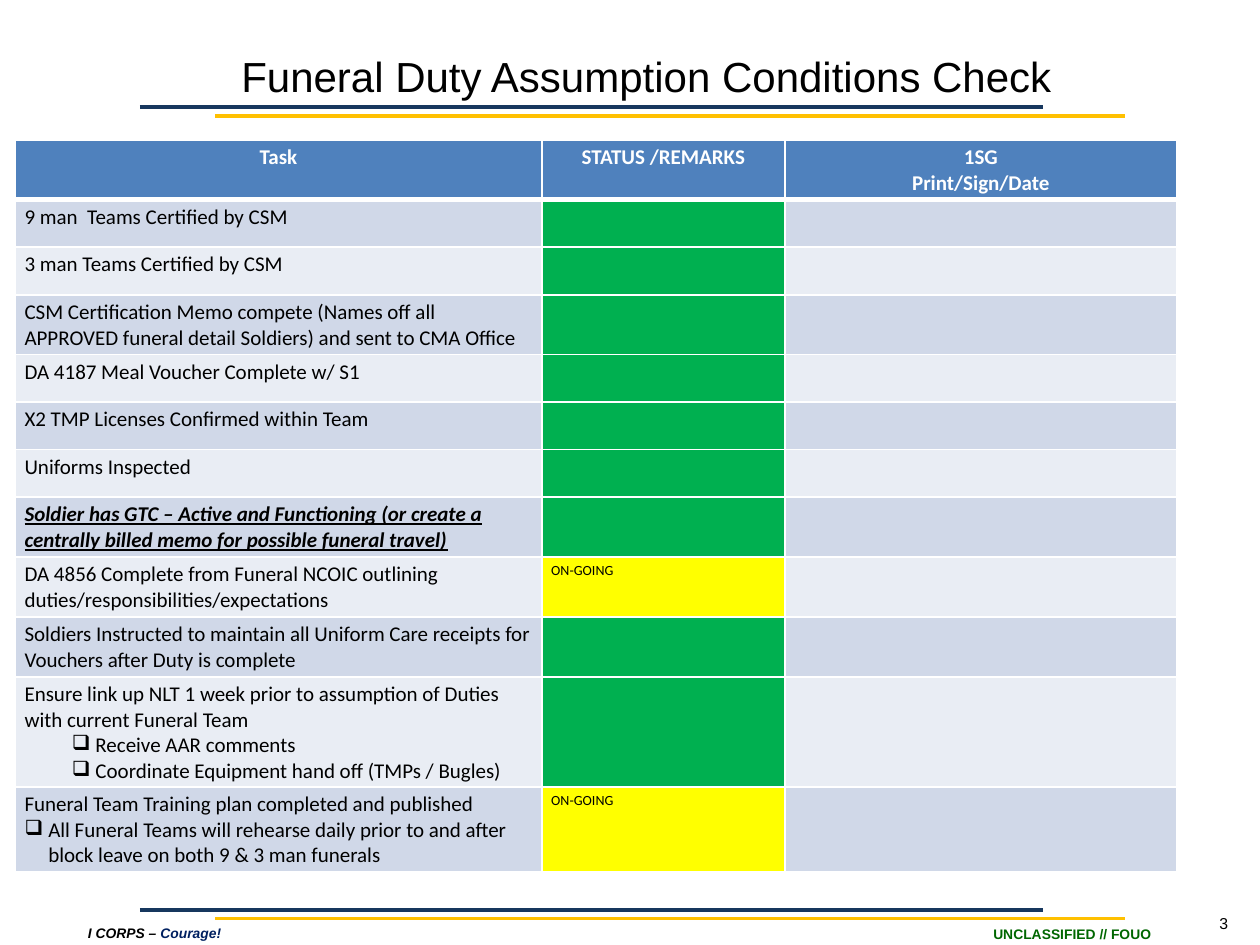
import pptx
import pptx.util
import pptx.dml.color
import pptx.enum.shapes
import pptx.enum.text
import pptx.oxml.ns
from lxml import etree

Pt = pptx.util.Pt
RGBColor = pptx.dml.color.RGBColor
ALIGN = pptx.enum.text.PP_ALIGN
ANCHOR = pptx.enum.text.MSO_ANCHOR
qn = pptx.oxml.ns.qn

WIDTH = pptx.util.Inches(10)
HEIGHT = pptx.util.Inches(7.5)

BLACK = RGBColor(0x00, 0x00, 0x00)
WHITE = RGBColor(0xFF, 0xFF, 0xFF)
NAVY = RGBColor(0x17, 0x37, 0x5E)
GOLD = RGBColor(0xFF, 0xC0, 0x00)
MOTTO = RGBColor(0x00, 0x20, 0x60)
MARKING = RGBColor(0x00, 0x66, 0x00)
HEADER = RGBColor(0x4F, 0x81, 0xBD)
BANDS = (RGBColor(0xD0, 0xD8, 0xE8), RGBColor(0xE9, 0xED, 0xF4))
GREEN = RGBColor(0x00, 0xB0, 0x50)
YELLOW = RGBColor(0xFF, 0xFF, 0x00)

COLUMNS = (41.8, 19.3, 31.1)
HEADER_ROW, TASK_ROW = 4.53, 5.03
BULLET = "❑"
HEADINGS = ("Task", "STATUS /REMARKS", "1SG\nPrint/Sign/Date")
KEY_TASK = "Soldier has GTC – Active and Functioning (or create a centrally billed memo for possible funeral travel)"
TASKS = (
    ("9 man  Teams Certified by CSM", ""),
    ("3 man Teams Certified by CSM", ""),
    ("CSM Certification Memo compete (Names off all APPROVED funeral detail Soldiers) and sent to CMA Office", ""),
    ("DA 4187 Meal Voucher Complete w/ S1", ""),
    ("X2 TMP Licenses Confirmed within Team", ""),
    ("Uniforms Inspected", ""),
    (KEY_TASK, ""),
    ("DA 4856 Complete from Funeral NCOIC outlining duties/responsibilities/expectations", "ON-GOING"),
    ("Soldiers Instructed to maintain all Uniform Care receipts for Vouchers after Duty is complete", ""),
    ("Ensure link up NLT 1 week prior to assumption of Duties with current Funeral Team", ""),
    ("Funeral Team Training plan completed and published", "ON-GOING"),
)
SUBTASKS = {
    9: (1, ("Receive AAR comments", "Coordinate Equipment hand off (TMPs / Bugles)")),
    10: (0, ("All Funeral Teams will rehearse daily prior to and after block leave on both 9 & 3 man funerals",)),
}


def across(percent):
    return round(WIDTH * percent / 100)


def down(percent):
    return round(HEIGHT * percent / 100)


def style_run(r, size, color, font="Calibri", bold=False, italic=False, underline=False):
    r.font.name = font
    r.font.size = Pt(size)
    r.font.color.rgb = color
    r.font.bold = bold
    r.font.italic = italic
    r.font.underline = underline


def add_rule(slide, left, right, y, color):
    line = slide.shapes.add_connector(
        pptx.enum.shapes.MSO_CONNECTOR.STRAIGHT, across(left), down(y), across(right), down(y))
    line.line.color.rgb = color
    line.line.width = Pt(2.25)
    etree.SubElement(line._element.spPr, qn("a:effectLst"))


def add_text(slide, left, top, width, height, parts, size, align=ALIGN.LEFT, **style):
    sp = slide.shapes.add_textbox(across(left), down(top), across(width), down(height))
    tf = sp.text_frame
    tf.word_wrap = True
    p = tf.paragraphs[0]
    p.alignment = align
    for text, color in parts:
        r = p.add_run()
        r.text = text
        style_run(r, size, color, "Arial", **style)
    return tf


def set_borders(cell, top, bottom):
    tcPr = cell._tc.get_or_add_tcPr()
    for i, (side, width) in enumerate((("L", 1), ("R", 1), ("T", top), ("B", bottom))):
        ln = etree.Element(qn("a:ln" + side), w=str(Pt(width)))
        fill = etree.SubElement(ln, qn("a:solidFill"))
        etree.SubElement(fill, qn("a:srgbClr"), val=str(WHITE))
        tcPr.insert(i, ln)


def fill_cell(cell, text, fill, size=12, color=BLACK, align=ALIGN.LEFT, top=1, bottom=1, **style):
    cell.fill.solid()
    cell.fill.fore_color.rgb = fill
    cell.margin_left = cell.margin_right = across(0.75)
    cell.margin_top = cell.margin_bottom = down(0.5)
    set_borders(cell, top, bottom)
    if text:
        cell.text_frame.text = text
        for p in cell.text_frame.paragraphs:
            p.alignment = align
            for r in p.runs:
                style_run(r, size, color, **style)


def add_bullet(cell, text, level):
    p = cell.text_frame.add_paragraph()
    p.text = text
    p.level = level
    pPr = p._p.get_or_add_pPr()
    pPr.set("marL", str(across(1.88 + 3.75 * level)))
    pPr.set("indent", str(-across(1.88)))
    etree.SubElement(pPr, qn("a:buChar"), char=BULLET)
    style_run(p.runs[0], 12, BLACK)


def add_checklist(slide):
    height = HEADER_ROW + TASK_ROW * len(TASKS)
    table = slide.shapes.add_table(
        len(TASKS) + 1, len(COLUMNS), across(1.2), down(14.8), across(sum(COLUMNS)), down(height)).table
    for column, width in zip(table.columns, COLUMNS):
        column.width = across(width)
    for i, row in enumerate(table.rows):
        row.height = down(TASK_ROW if i else HEADER_ROW)
    for col, heading in enumerate(HEADINGS):
        fill_cell(table.cell(0, col), heading, HEADER, color=WHITE, align=ALIGN.CENTER, bottom=3, bold=True)
    for i, (task, status) in enumerate(TASKS):
        band = BANDS[i % 2]
        key = task == KEY_TASK
        top = 1 if i else 3
        cells = table.rows[i + 1].cells
        fill_cell(cells[0], task, band, top=top, bold=key, italic=key, underline=key)
        fill_cell(cells[1], status, YELLOW if status else GREEN, size=8, top=top)
        fill_cell(cells[2], "", band, top=top)
    for i, (level, items) in SUBTASKS.items():
        for item in items:
            add_bullet(table.cell(i + 1, 0), item, level)


def main():
    prs = pptx.Presentation()
    prs.slide_width, prs.slide_height = WIDTH, HEIGHT
    slide = prs.slides.add_slide(prs.slide_layouts[6])

    for y in (11.33, 96.27):
        add_rule(slide, 11.1, 82.75, y, NAVY)
        add_rule(slide, 17.1, 89.25, y + 0.93, GOLD)

    tf = add_text(slide, 75.1, 98, 20, 1.73, [("UNCLASSIFIED // FOUO", MARKING)], 7.9, ALIGN.CENTER, bold=True)
    tf.margin_top = tf.margin_bottom = 0
    tf.vertical_anchor = ANCHOR.MIDDLE
    add_text(slide, 6, 97.2, 18.7, 3.2, [("I CORPS – ", BLACK), ("Courage!", MOTTO)], 7.9, bold=True, italic=True)
    add_text(slide, 95.8, 96, 4.2, 3.33, [("3", BLACK)], 9)
    add_text(slide, 11, 4.67, 80.6, 6.67, [("Funeral Duty Assumption Conditions Check", BLACK)], 24, ALIGN.CENTER)
    add_checklist(slide)

    prs.save("out.pptx")


if __name__ == "__main__":
    main()
